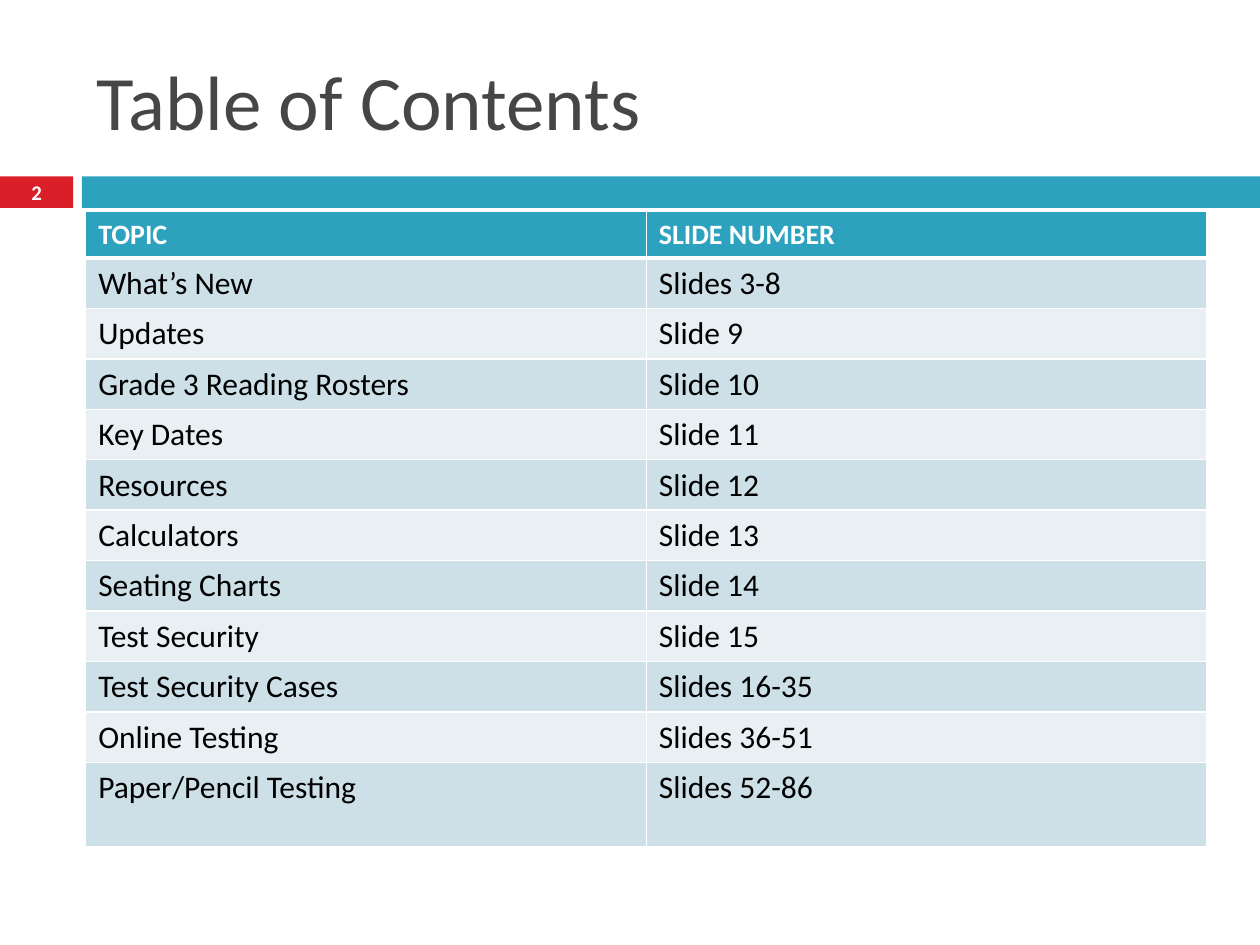
from pptx import Presentation
from pptx.dml.color import RGBColor
from pptx.enum.shapes import MSO_SHAPE as SHAPE
from pptx.enum.text import MSO_ANCHOR as ANCHOR, PP_ALIGN as ALIGN
from pptx.oxml import parse_xml
from pptx.oxml.ns import nsdecls
from pptx.util import Inches, Pt

FONT = "Calibri"
WHITE = RGBColor(0xFF, 0xFF, 0xFF)
BLACK = RGBColor(0x00, 0x00, 0x00)
GRAY = RGBColor(0x46, 0x46, 0x46)
RED = RGBColor(0xDA, 0x1F, 0x28)
TEAL = RGBColor(0x2D, 0xA2, 0xBF)
BAND_DARK = RGBColor(0xCD, 0xE0, 0xE8)
BAND_LIGHT = RGBColor(0xE8, 0xF0, 0xF4)

TITLE_STYLE = {"size": Pt(44), "bold": False}
NUMBER_STYLE = {"size": Pt(11.9), "bold": True}
HEADER_STYLE = {"size": Pt(16), "bold": True}
BODY_STYLE = {"size": Pt(18), "bold": False}

TOPICS = [
    ("TOPIC", "SLIDE NUMBER"),
    ("What’s New", "Slides 3-8"),
    ("Updates", "Slide 9"),
    ("Grade 3 Reading Rosters", "Slide 10"),
    ("Key Dates", "Slide 11"),
    ("Resources", "Slide 12"),
    ("Calculators", "Slide 13"),
    ("Seating Charts", "Slide 14"),
    ("Test Security", "Slide 15"),
    ("Test Security Cases", "Slides 16-35"),
    ("Online Testing", "Slides 36-51"),
    ("Paper/Pencil Testing", "Slides 52-86"),
]
HEADER_HEIGHT, ROW_HEIGHT, LAST_HEIGHT = 0.36, 0.4, 0.67


def write(tf, text, style, color, align=ALIGN.LEFT):
    p = tf.paragraphs[0]
    p.alignment = align
    r = p.add_run()
    r.text = text
    r.font.name = FONT
    r.font.color.rgb = color
    for name, value in style.items():
        setattr(r.font, name, value)


def add_bar(s, left, width, color):
    bar = s.shapes.add_shape(SHAPE.RECTANGLE, Inches(left), Inches(1.4),
                             Inches(width), Inches(0.25))
    bar.shadow.inherit = False
    bar.fill.solid()
    bar.fill.fore_color.rgb = color
    bar.line.fill.background()


def add_text(s, box, text, style, color, align=ALIGN.LEFT):
    tf = s.shapes.add_textbox(*map(Inches, box)).text_frame
    tf.word_wrap = True
    tf.vertical_anchor = ANCHOR.MIDDLE
    write(tf, text, style, color, align)


def set_borders(cell, bottom=1, top=1):
    """Draw white borders, with widths in points."""
    tc_pr = cell._tc.get_or_add_tcPr()
    widths = {"lnL": 1, "lnR": 1, "lnT": top, "lnB": bottom}
    for i, (tag, width) in enumerate(widths.items()):
        tc_pr.insert(i, parse_xml(
            f'<a:{tag} {nsdecls("a")} w="{Pt(width)}"><a:solidFill>'
            f'<a:srgbClr val="{WHITE}"/></a:solidFill></a:{tag}>'))


def add_contents(s):
    frame = s.shapes.add_table(len(TOPICS), 2, Inches(0.68), Inches(1.68),
                               Inches(8.9), Inches(5.06))
    table = frame.table
    last = len(TOPICS) - 1
    heights = {0: HEADER_HEIGHT, last: LAST_HEIGHT}
    for i, texts in enumerate(TOPICS):
        table.rows[i].height = Inches(heights.get(i, ROW_HEIGHT))
        if i == 0:
            fill, style, color = TEAL, HEADER_STYLE, WHITE
        else:
            fill = BAND_DARK if i % 2 else BAND_LIGHT
            style, color = BODY_STYLE, BLACK
        for cell, text in zip(table.rows[i].cells, texts):
            cell.fill.solid()
            cell.fill.fore_color.rgb = fill
            set_borders(cell, bottom=3 if i == 0 else 1, top=3 if i == 1 else 1)
            write(cell.text_frame, text, style, color)


def main():
    prs = Presentation()
    prs.slide_width, prs.slide_height = Inches(10), Inches(7.5)
    s = prs.slides.add_slide(prs.slide_layouts[6])
    add_bar(s, 0, 0.58, RED)
    add_bar(s, 0.65, 9.35, TEAL)
    add_text(s, (0.67, 0.25, 8.92, 1.08), "Table of Contents", TITLE_STYLE, GRAY)
    add_text(s, (0, 1.39, 0.58, 0.27), "2", NUMBER_STYLE, WHITE, ALIGN.CENTER)
    add_contents(s)
    prs.save("out.pptx")


if __name__ == "__main__":
    main()
